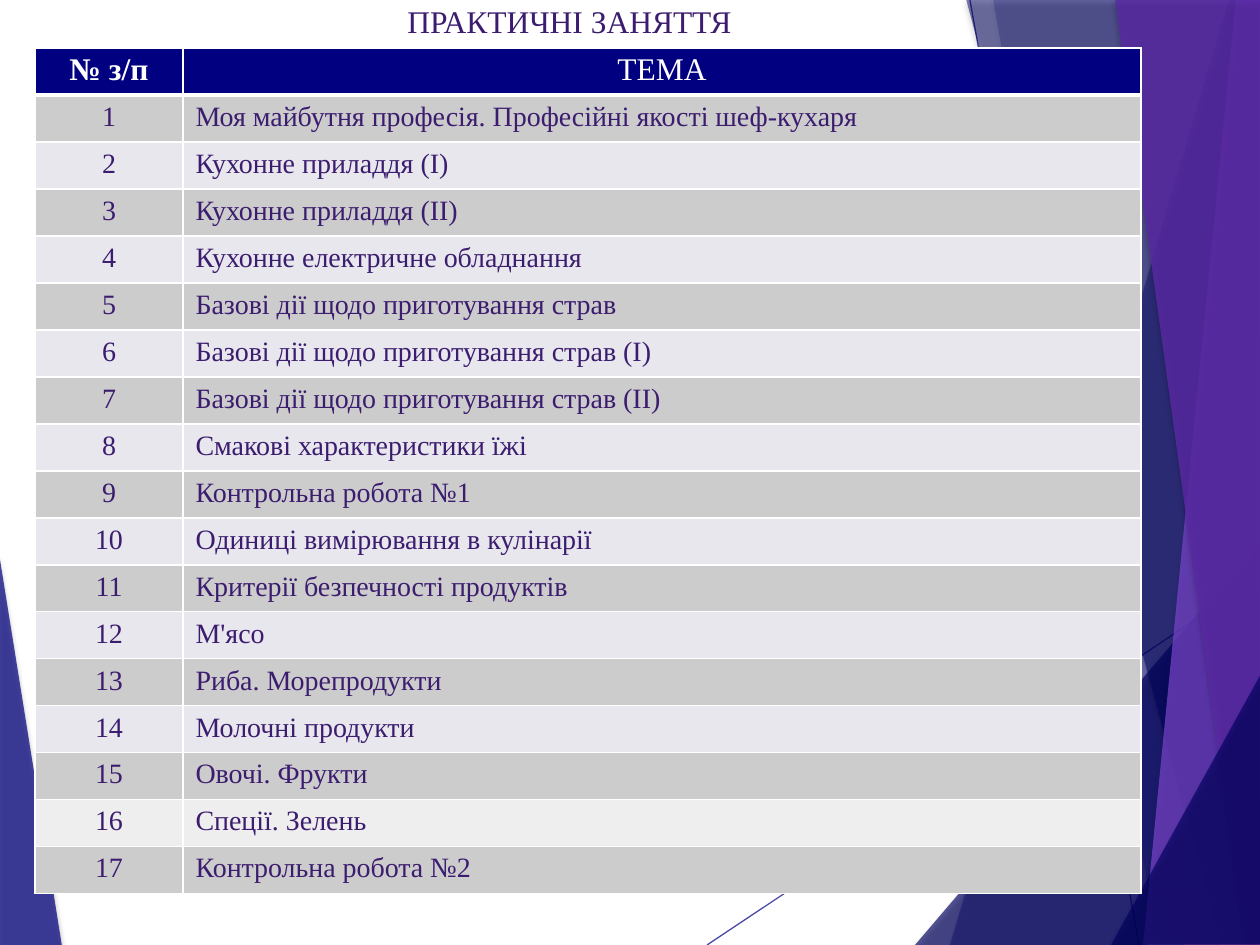
from lxml.etree import SubElement
from pptx import Presentation
from pptx.dml.color import RGBColor
from pptx.enum.shapes import MSO_CONNECTOR
from pptx.enum.text import MSO_ANCHOR, MSO_AUTO_SIZE, PP_ALIGN
from pptx.oxml.ns import qn
from pptx.util import Pt

PX = 914400 / 126
COLORS = {
    "navy": "000080", "deep": "000060", "violet": "7B46D0", "purple": "5A2AA6",
    "text": "3C1C6F", "white": "FFFFFF", "black": "000000",
    "gray": "CCCCCC", "pale": "E7E7ED", "light": "EEEEEE",
}
TOPICS = [
    "Моя майбутня професія. Професійні якості шеф-кухаря",
    "Кухонне приладдя (І)",
    "Кухонне приладдя (ІІ)",
    "Кухонне електричне обладнання",
    "Базові дії щодо приготування страв",
    "Базові дії щодо приготування страв (І)",
    "Базові дії щодо приготування страв (ІІ)",
    "Смакові характеристики їжі",
    "Контрольна робота №1",
    "Одиниці вимірювання в кулінарії",
    "Критерії безпечності продуктів",
    "М'ясо",
    "Риба. Морепродукти",
    "Молочні продукти",
    "Овочі. Фрукти",
    "Спеції. Зелень",
    "Контрольна робота №2",
]
DECORATIONS = [
    ("navy", 70, [(-1, 553), (62, 946), (-1, 945)]),
    ("navy", 70, [(707, 945), (1261, 576)]),
    ("navy", 70, [(970, 0), (1139, 945)]),
    ("navy", 36, [(1229, 0), (950, 945), (1262, 946), (1261, 1)]),
    ("navy", 20, [(993, -1), (1158, 945), (1261, 945), (1261, -1)]),
    ("deep", 66, [(915, 945), (1260, 541), (1261, 945)]),
    ("deep", 50, [(966, -1), (1221, 945), (1261, 944), (1261, -1)]),
    ("violet", 70, [(1236, -1), (1143, 945), (1261, 945), (1260, -1)]),
    ("purple", 82, [(1115, -1), (1245, 945), (1262, 945), (1260, -1)]),
    ("deep", 66, [(1111, 945), (1261, 674), (1262, 944)]),
]


def emu(pixels):
    return round(pixels * PX)


def write_text(frame, text, size, color, alignment, bold=False):
    frame.text = text
    paragraph = frame.paragraphs[0]
    paragraph.alignment = alignment
    font = paragraph.runs[0].font
    values = {"name": "Times New Roman", "size": Pt(size), "bold": bold}
    for name, value in values.items():
        setattr(font, name, value)
    font.color.rgb = RGBColor.from_string(COLORS[color])


presentation = Presentation()
presentation.slide_width = emu(1260)
presentation.slide_height = emu(945)
slide = presentation.slides.add_slide(presentation.slide_layouts[5])

for color, opacity, points in DECORATIONS:
    if len(points) == 2:
        start, end = points
        shape = slide.shapes.add_connector(
            MSO_CONNECTOR.STRAIGHT, *[emu(value) for value in start + end])
        shape.line.width = Pt(0.75)
        fill = shape.line.fill
    else:
        builder = slide.shapes.build_freeform(*points[0], scale=PX)
        builder.add_line_segments(points[1:], close=True)
        shape = builder.convert_to_shape()
        shape.line.fill.background()
        fill = shape.fill
    fill.solid()
    fill.fore_color.rgb = RGBColor.from_string(COLORS[color])
    properties = shape.element.spPr
    color_element = next(properties.iter(qn("a:srgbClr")))
    SubElement(color_element, qn("a:alpha"), val=str(opacity * 1000))
    effects = SubElement(properties, qn("a:effectLst"))
    if len(points) > 2:
        shadow = SubElement(effects, qn("a:outerShdw"), blurRad=str(Pt(3)),
                            dist=str(Pt(2)), dir="5400000", rotWithShape="0")
        shadow_color = SubElement(shadow, qn("a:srgbClr"), val=COLORS["black"])
        SubElement(shadow_color, qn("a:alpha"), val="35000")

table = slide.shapes.add_table(
    len(TOPICS) + 1, 2, emu(35), emu(48), emu(1106), emu(846)).table
for column, width in zip(table.columns, (148, 958)):
    column.width = emu(width)

rows = [("№ з/п", "ТЕМА")]
rows += [(str(number), topic) for number, topic in enumerate(TOPICS, 1)]
for row_index, row in enumerate(rows):
    table.rows[row_index].height = emu(47)
    header = row_index == 0
    if header:
        fill_color = "navy"
    elif row_index == 16:
        fill_color = "light"
    else:
        fill_color = "gray" if row_index % 2 else "pale"
    for column_index, text in enumerate(row):
        cell = table.cell(row_index, column_index)
        if header or column_index == 0:
            alignment = PP_ALIGN.CENTER
        else:
            alignment = PP_ALIGN.JUSTIFY if row_index in (8, 9) else PP_ALIGN.LEFT
        write_text(cell.text_frame, text, 18 if header else 16,
                   "white" if header else "text", alignment,
                   header and column_index == 0)
        if header:
            cell.margin_top = cell.margin_bottom = emu(4)
        cell_properties = cell._tc.get_or_add_tcPr()
        for side in ("L", "R", "T", "B"):
            thick = (row_index, side) in ((0, "B"), (1, "T"))
            border = SubElement(cell_properties, qn(f"a:ln{side}"),
                                w=str(Pt(3 if thick else 0.96)))
            border_fill = SubElement(border, qn("a:solidFill"))
            SubElement(border_fill, qn("a:srgbClr"), val=COLORS["white"])
        cell.fill.solid()
        cell.fill.fore_color.rgb = RGBColor.from_string(COLORS[fill_color])

title = slide.shapes.title
bounds = {"left": 253, "top": -4, "width": 633, "height": 51}
for name, value in bounds.items():
    setattr(title, name, emu(value))
title.text_frame.auto_size = MSO_AUTO_SIZE.NONE
title.text_frame.vertical_anchor = MSO_ANCHOR.TOP
write_text(title.text_frame, "ПРАКТИЧНІ ЗАНЯТТЯ", 18, "text", PP_ALIGN.CENTER)

presentation.save("out.pptx")
